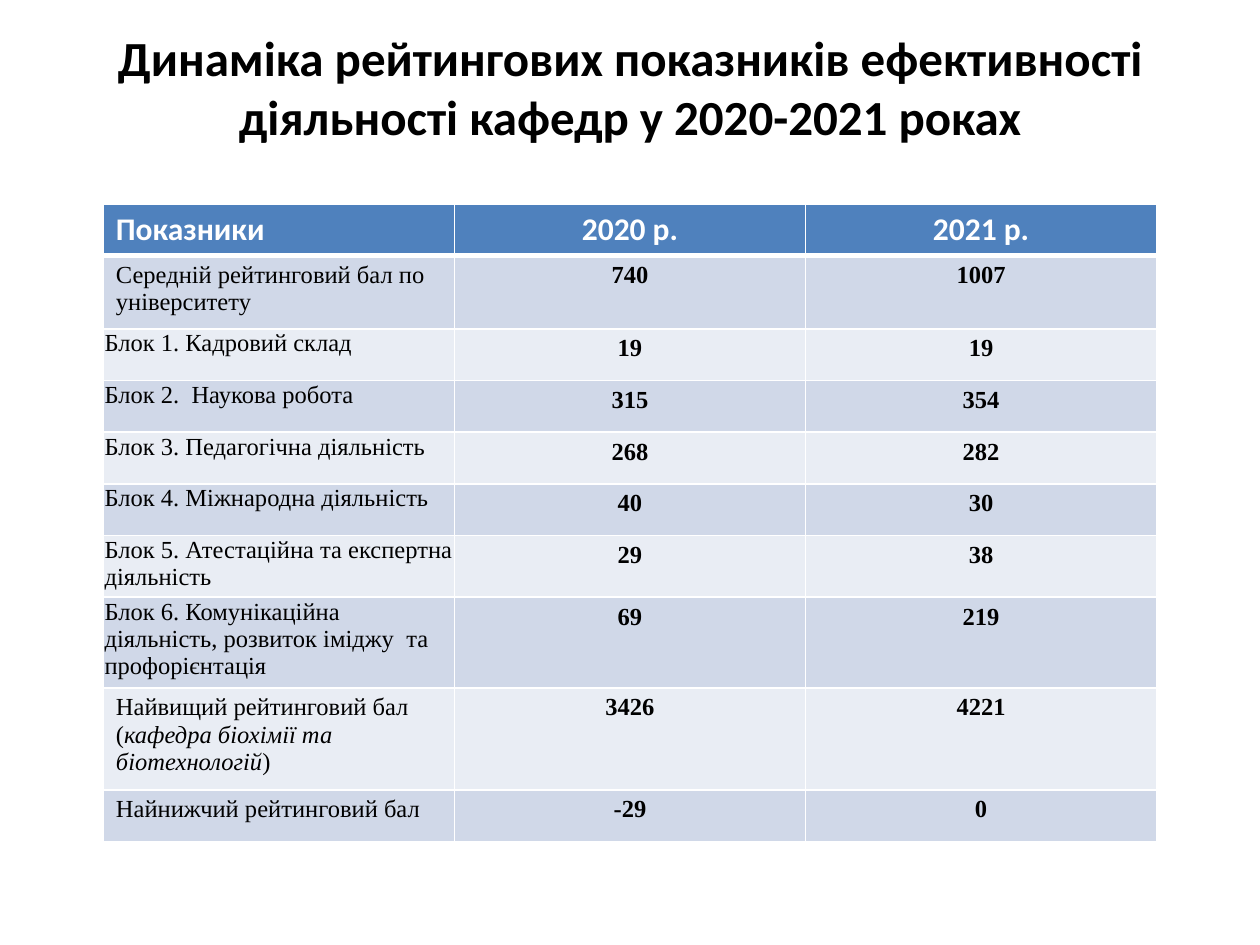
import pptx
import pptx.dml.color
import pptx.enum.text
import pptx.oxml
import pptx.oxml.ns
import pptx.util

Inches = pptx.util.Inches
CENTER = pptx.enum.text.PP_ALIGN.CENTER
LEFT = pptx.enum.text.PP_ALIGN.LEFT

HEADER_FILL = "4F81BD"
BAND_FILLS = ("D0D8E8", "E9EDF4")
WHITE, BLACK = "FFFFFF", "000000"

TITLE = "Динаміка рейтингових показників ефективності діяльності кафедр у 2020-2021 роках"
HEADINGS = ("Показники", "2020 р.", "2021 р.")

# Indicator, 2020 score, 2021 score, row height; asterisks enclose italics
INDICATORS = (
    ("Середній рейтинговий бал по університету", "740", "1007", 0.58),
    ("Блок 1. Кадровий склад", "19", "19", 0.41),
    ("Блок 2.  Наукова робота", "315", "354", 0.41),
    ("Блок 3. Педагогічна діяльність", "268", "282", 0.41),
    ("Блок 4. Міжнародна діяльність", "40", "30", 0.41),
    ("Блок 5. Атестаційна та експертна діяльність", "29", "38", 0.49),
    ("Блок 6. Комунікаційна діяльність, розвиток іміджу  та профорієнтація",
     "69", "219", 0.72),
    ("Найвищий рейтинговий бал (*кафедра біохімії та біотехнологій*)",
     "3426", "4221", 0.81),
    ("Найнижчий рейтинговий бал", "-29", "0", 0.41),
)


def color(hex_value):
    return pptx.dml.color.RGBColor.from_string(hex_value)


def write_text(frame, text, size, font, hex_value, bold, align):
    paragraph = frame.paragraphs[0]
    paragraph.alignment = align
    for index, part in enumerate(text.split("*")):
        run = paragraph.add_run()
        run.text = part
        run.font.size = pptx.util.Pt(size)
        run.font.name = font
        run.font.bold = bold
        run.font.italic = index % 2 == 1
        run.font.color.rgb = color(hex_value)


def set_borders(cell, bottom, top):
    properties = cell._tc.get_or_add_tcPr()
    widths = (("lnL", 1), ("lnR", 1), ("lnT", top), ("lnB", bottom))
    for position, (side, width) in enumerate(widths):
        line = pptx.oxml.parse_xml(
            f'<a:{side} {pptx.oxml.ns.nsdecls("a")} w="{pptx.util.Pt(width)}">'
            f'<a:solidFill><a:srgbClr val="{WHITE}"/></a:solidFill></a:{side}>')
        properties.insert(position, line)


def style_cell(cell, fill, top=1, bottom=1):
    cell.fill.solid()
    cell.fill.fore_color.rgb = color(fill)
    set_borders(cell, bottom, top)


def tighten_margins(cell):
    cell.margin_left = cell.margin_right = cell.margin_top = Inches(0.01)
    cell.margin_bottom = Inches(0)


def add_title(slide):
    title = slide.shapes.add_textbox(Inches(0.5), Inches(0.3), Inches(9), Inches(0.77))
    frame = title.text_frame
    frame.word_wrap = True
    frame.vertical_anchor = pptx.enum.text.MSO_ANCHOR.MIDDLE
    write_text(frame, TITLE, 28, "Calibri", BLACK, True, CENTER)


def add_scores(slide):
    scores = slide.shapes.add_table(
        len(INDICATORS) + 1, len(HEADINGS),
        Inches(0.82), Inches(1.62), Inches(8.36), Inches(5.07)).table

    # Header row
    scores.rows[0].height = Inches(0.41)
    for column, heading in enumerate(HEADINGS):
        cell = scores.cell(0, column)
        style_cell(cell, HEADER_FILL, bottom=3)
        write_text(cell.text_frame, heading, 18, "Calibri", WHITE, True,
                   CENTER if column else LEFT)

    # Indicator rows in alternating bands
    for row, (*texts, height) in enumerate(INDICATORS, start=1):
        scores.rows[row].height = Inches(height)
        for column, text in enumerate(texts):
            cell = scores.cell(row, column)
            style_cell(cell, BAND_FILLS[(row - 1) % 2], top=3 if row == 1 else 1)
            if text.startswith("Блок"):
                tighten_margins(cell)
            write_text(cell.text_frame, text, 14, "Times New Roman", BLACK,
                       column > 0, CENTER if column else LEFT)


def main():
    presentation = pptx.Presentation()
    presentation.slide_width = Inches(10)
    presentation.slide_height = Inches(7.5)
    slide = presentation.slides.add_slide(presentation.slide_layouts[6])
    add_title(slide)
    add_scores(slide)
    presentation.save("out.pptx")


if __name__ == "__main__":
    main()
